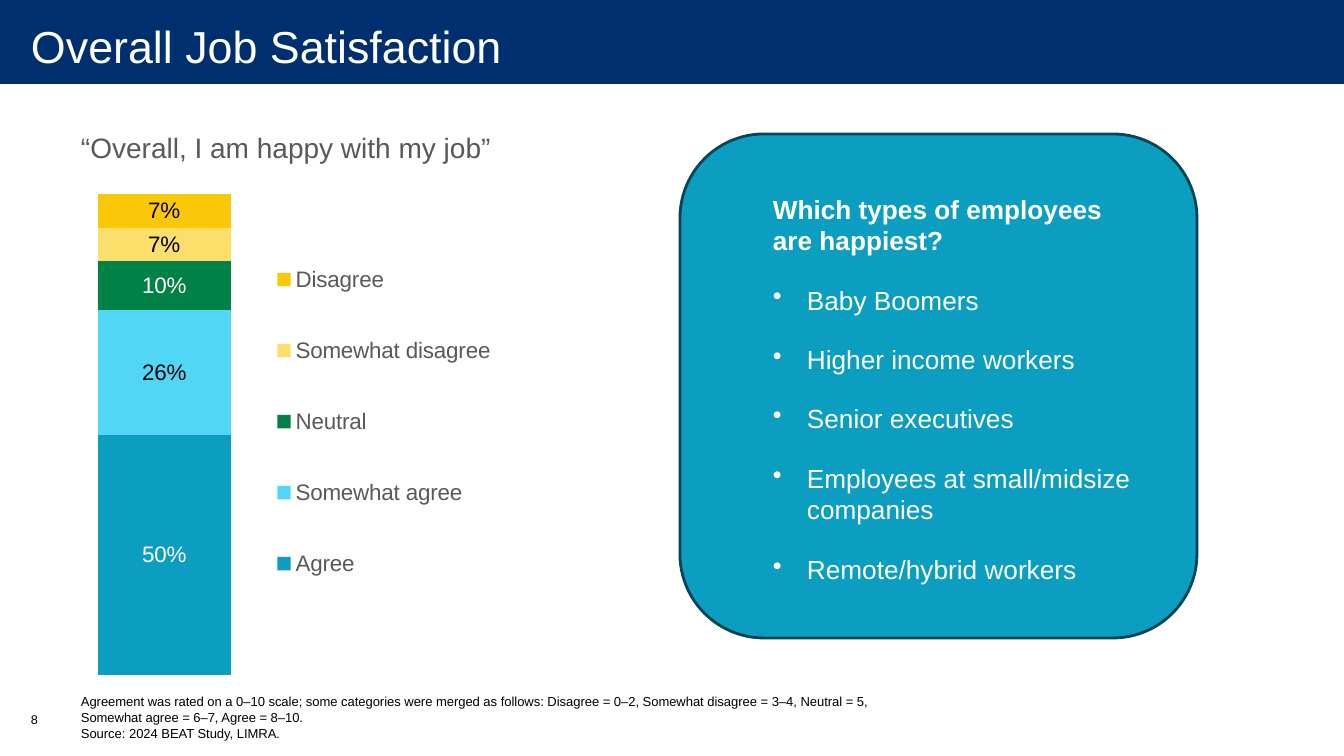
import pptx
import pptx.chart.data
import pptx.dml.color
import pptx.enum.chart
import pptx.enum.shapes
import pptx.enum.text
import pptx.oxml
import pptx.oxml.ns
import pptx.util

EMU_PER_PX = 12192000 / 1344
FONT = "Arial"
COLORS = {
    "navy": "002F70", "teal": "0B9EC1", "dark teal": "054555",
    "sky": "51D6F5", "green": "008145", "pale yellow": "FCDE6B",
    "yellow": "FAC809", "gray": "595959", "black": "000000", "white": "FFFFFF",
}
# Answer, share, bar colour, label colour
RATINGS = [
    ("Agree", 0.5, "teal", "white"),
    ("Somewhat agree", 0.26, "sky", "black"),
    ("Neutral", 0.1, "green", "white"),
    ("Somewhat disagree", 0.07, "pale yellow", "black"),
    ("Disagree", 0.07, "yellow", "black"),
]
HAPPIEST = [
    "Baby Boomers", "Higher income workers", "Senior executives",
    "Employees at small/midsize companies", "Remote/hybrid workers",
]
FOOTNOTES = [
    "Agreement was rated on a 0–10 scale; some categories were merged as follows: "
    "Disagree = 0–2, Somewhat disagree = 3–4, Neutral = 5, "
    "Somewhat agree = 6–7, Agree = 8–10.",
    "Source: 2024 BEAT Study, LIMRA.",
]


def px(length):
    return pptx.util.Emu(round(length * EMU_PER_PX))


def rgb(color):
    return pptx.dml.color.RGBColor.from_string(COLORS[color])


def style_font(font, size, color, bold=False):
    font.name = FONT
    font.size = pptx.util.Pt(size)
    font.color.rgb = rgb(color)
    font.bold = bold


def add_run(paragraph, text, size, color, bold=False):
    run = paragraph.add_run()
    run.text = text
    style_font(run.font, size, color, bold)


def add_panel(slide, kind, box, fill, line=None):
    panel = slide.shapes.add_shape(kind, *map(px, box))
    panel.shadow.inherit = False
    panel.fill.solid()
    panel.fill.fore_color.rgb = rgb(fill)
    if line:
        panel.line.color.rgb = rgb(line)
        panel.line.width = pptx.util.Pt(2)
    else:
        panel.line.fill.background()


def add_text(slide, box, lines, size, color, align=pptx.enum.text.PP_ALIGN.LEFT):
    frame = slide.shapes.add_textbox(*map(px, box)).text_frame
    frame.word_wrap = True
    for index, line in enumerate(lines):
        paragraph = frame.add_paragraph() if index else frame.paragraphs[0]
        paragraph.alignment = align
        add_run(paragraph, line, size, color)
    return frame


def add_bullet(frame, text, size, color):
    paragraph = frame.add_paragraph()
    properties = paragraph._p.get_or_add_pPr()
    properties.set("marL", str(px(34)))
    properties.set("indent", str(-px(34)))
    bullet = pptx.oxml.parse_xml(
        f'<a:buChar {pptx.oxml.ns.nsdecls("a")} char="•"/>')
    properties.append(bullet)
    paragraph.space_before = pptx.util.Pt(20)
    add_run(paragraph, text, size, color)


def manual_layout(x, y, width, height, inner=False):
    target = '<c:layoutTarget val="inner"/>' if inner else ""
    return pptx.oxml.parse_xml(
        f'<c:layout {pptx.oxml.ns.nsdecls("c")}><c:manualLayout>{target}'
        '<c:xMode val="edge"/><c:yMode val="edge"/>'
        f'<c:x val="{x}"/><c:y val="{y}"/><c:w val="{width}"/><c:h val="{height}"/>'
        '</c:manualLayout></c:layout>')


def add_satisfaction_chart(slide, box):
    shares = pptx.chart.data.CategoryChartData(number_format="0%")
    shares.categories = ["1"]
    for answer, share, _, _ in RATINGS:
        shares.add_series(answer, [share])
    chart = slide.shapes.add_chart(
        pptx.enum.chart.XL_CHART_TYPE.COLUMN_STACKED_100,
        *map(px, box), shares).chart
    chart.has_title = False
    style_font(chart.font, 16, "black")

    # Axes
    for axis in (chart.category_axis, chart.value_axis):
        axis.has_major_gridlines = False
        axis.visible = False
    chart.value_axis.minimum_scale = 0
    chart.value_axis.maximum_scale = 1

    # Stacked bar
    plot = chart.plots[0]
    plot.gap_width = 63
    plot.overlap = 100
    plot.vary_by_categories = False
    for series, (_, _, fill, label_color) in zip(plot.series, RATINGS):
        series.format.fill.solid()
        series.format.fill.fore_color.rgb = rgb(fill)
        labels = series.data_labels
        labels.show_value = True
        labels.number_format = "0%"
        labels.number_format_is_linked = False
        labels.position = pptx.enum.chart.XL_LABEL_POSITION.CENTER
        style_font(labels.font, 16, label_color)
    plot_area = chart._chartSpace.chart.plotArea
    for layout in plot_area.findall(pptx.oxml.ns.qn("c:layout")):
        plot_area.remove(layout)
    plot_area.insert(0, manual_layout(0.08, 0.04, 0.44, 0.91, inner=True))

    # Legend
    chart.has_legend = True
    legend = chart.legend
    legend.position = pptx.enum.chart.XL_LEGEND_POSITION.RIGHT
    legend.include_in_layout = True
    style_font(legend.font, 16, "gray")
    for layout in legend._element.findall(pptx.oxml.ns.qn("c:layout")):
        legend._element.remove(layout)
    position = legend._element.find(pptx.oxml.ns.qn("c:legendPos"))
    position.addnext(manual_layout(0.51, 0.09, 0.47, 0.76))


def main():
    deck = pptx.Presentation()
    deck.slide_width, deck.slide_height = px(1344), px(756)
    slide = deck.slides.add_slide(deck.slide_layouts[6])
    shape_kinds = pptx.enum.shapes.MSO_SHAPE

    # Header
    add_panel(slide, shape_kinds.RECTANGLE, (0, 0, 1344, 84), "navy")
    title = add_text(slide, (1, 0, 1343, 92), ["Overall Job Satisfaction"], 32, "white")
    title.vertical_anchor = pptx.enum.text.MSO_ANCHOR.MIDDLE
    title.margin_left = px(30)

    # Survey statement and answers
    add_satisfaction_chart(slide, (16, 173, 494, 529))
    add_text(slide, (51, 126, 470, 44), ["“Overall, I am happy with my job”"],
             20, "gray", pptx.enum.text.PP_ALIGN.CENTER)

    # Happiest employees
    add_panel(slide, shape_kinds.ROUNDED_RECTANGLE, (680, 134, 517, 504),
              "teal", "dark teal")
    happiest = add_text(slide, (763, 188, 428, 410), [], 18.7, "white")
    question = happiest.paragraphs[0]
    add_run(question, "Which types of employees", 18.7, "white", bold=True)
    question.add_line_break()
    add_run(question, "are happiest?", 18.7, "white", bold=True)
    for group in HAPPIEST:
        add_bullet(happiest, group, 18.7, "white")

    # Footer
    add_text(slide, (71, 689, 834, 57), FOOTNOTES, 9.3, "black")
    add_text(slide, (21, 707, 49, 40), ["8"], 9, "black")

    deck.save("out.pptx")


if __name__ == "__main__":
    main()
